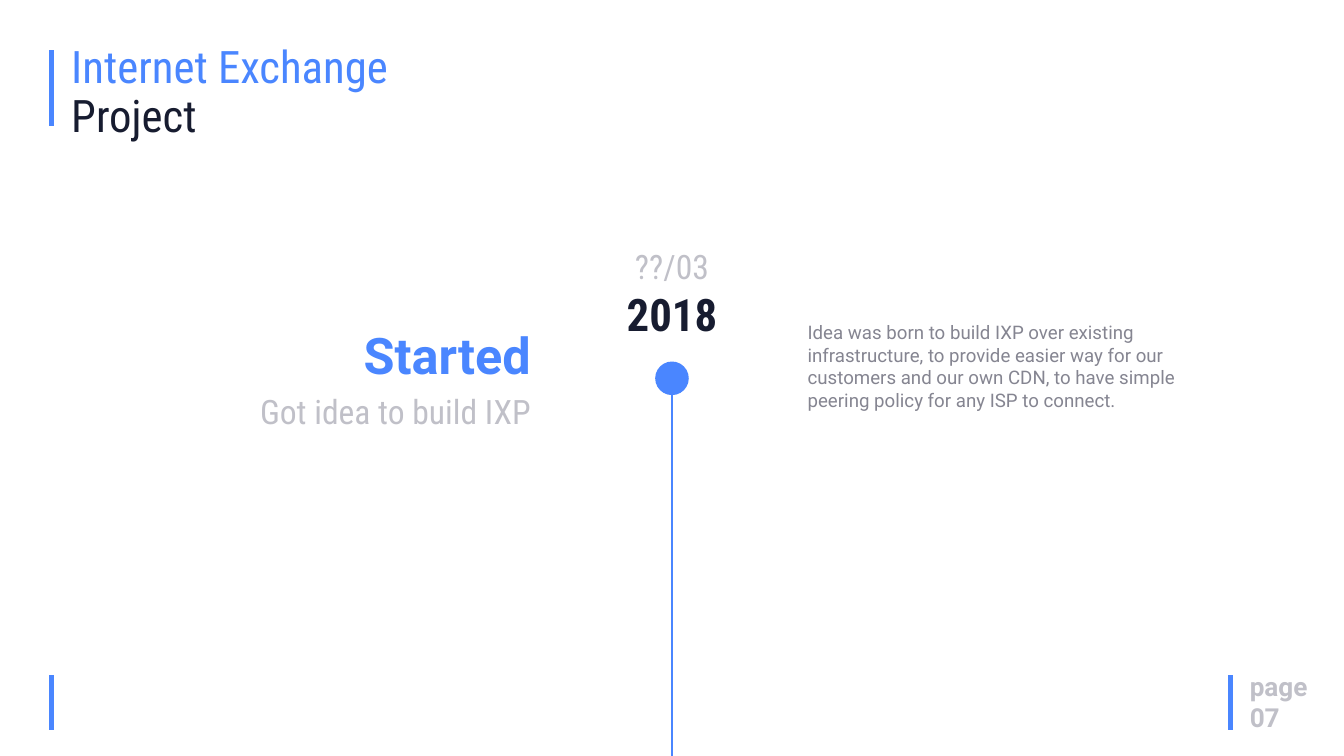
"""Build the Internet Exchange Project timeline slide."""
import pptx
import pptx.dml.color
import pptx.enum.shapes
import pptx.enum.text
import pptx.oxml
import pptx.oxml.ns
import pptx.util

PX = 9144
ALIGN = pptx.enum.text.PP_ALIGN
THEME = {
    "blue": "4A86FF", "navy": "171C30", "silver": "C0C0C8", "grey": "858591",
    "plain": "Roboto", "narrow": "Roboto Condensed",
    "hero": 54, "title": 48, "subtitle": 36, "page": 28, "body": 20,
}


def add_span(para, text, face, size, color, bold=False):
    span = para.add_run()
    span.text = text
    values = {"name": THEME[face], "size": pptx.util.Pt(THEME[size]), "bold": bold}
    for name, value in values.items():
        setattr(span.font, name, value)
    span.font.color.rgb = pptx.dml.color.RGBColor.from_string(THEME[color])


def add_rule(page, x, top, bottom, weight):
    rule = page.shapes.add_connector(
        pptx.enum.shapes.MSO_CONNECTOR.STRAIGHT, x * PX, top * PX, x * PX, bottom * PX)
    rule.line.width = pptx.util.Pt(weight)
    rule.line.color.rgb = blue
    rule._element.spPr.append(pptx.oxml.parse_xml(
        f"<a:effectLst {pptx.oxml.ns.nsdecls('a')}/>"))


blue = pptx.dml.color.RGBColor.from_string(THEME["blue"])
deck = pptx.Presentation()
deck.slide_width, deck.slide_height = 2000 * PX, 1125 * PX
page = deck.slides.add_slide(deck.slide_layouts[5])

for x, top, bottom, weight in [
    (77, 1005, 1086, 5), (1831, 1005, 1086, 5), (77, 75, 188, 5), (1000, 588, 1125, 3),
]:
    add_rule(page, x, top, bottom, weight)

title = page.shapes.title
place = {"left": 96, "top": 62, "width": 596, "height": 146}
for name, value in place.items():
    setattr(title, name, value * PX)
frame_format = {
    "word_wrap": True,
    "auto_size": pptx.enum.text.MSO_AUTO_SIZE.NONE,
    "vertical_anchor": pptx.enum.text.MSO_ANCHOR.TOP,
}
for name, value in frame_format.items():
    setattr(title.text_frame, name, value)
para = title.text_frame.paragraphs[0]
para.alignment = ALIGN.LEFT
para.line_spacing = 0.9
add_span(para, "Internet Exchange ", "narrow", "title", "blue")
para.add_line_break()
add_span(para, "Project", "narrow", "title", "navy")

dot = page.shapes.add_shape(
    pptx.enum.shapes.MSO_SHAPE.OVAL, 975 * PX, 538 * PX, 50 * PX, 50 * PX)
dot.shadow.inherit = False
dot.fill.solid()
dot.fill.fore_color.rgb = blue
dot.line.fill.background()

idea = ("Idea was born to build IXP over existing infrastructure, to provide easier way "
        "for our customers and our own CDN, to have simple peering policy for any ISP to connect.")
texts = [
    ((1850, 992, 190, 104), ALIGN.LEFT, [
        ("page", "plain", "page", "silver", True),
        ("07", "plain", "page", "silver", True)]),
    ((900, 361, 200, 151), ALIGN.CENTER, [
        ("??/03", "narrow", "subtitle", "silver"),
        ("2018", "narrow", "title", "navy", True)]),
    ((1192, 473, 600, 145), ALIGN.LEFT, [(idea, "plain", "body", "grey")]),
    ((200, 477, 600, 101), ALIGN.RIGHT, [("Started", "plain", "hero", "blue", True)]),
    ((275, 577, 525, 71), ALIGN.RIGHT, [
        ("Got idea to build IXP", "narrow", "subtitle", "silver")]),
]
for area, alignment, lines in texts:
    box = page.shapes.add_textbox(*(length * PX for length in area))
    frame = box.text_frame
    for name, value in frame_format.items():
        setattr(frame, name, value)
    for index, line in enumerate(lines):
        para = frame.add_paragraph() if index else frame.paragraphs[0]
        para.alignment = alignment
        add_span(para, *line)

deck.save("out.pptx")
